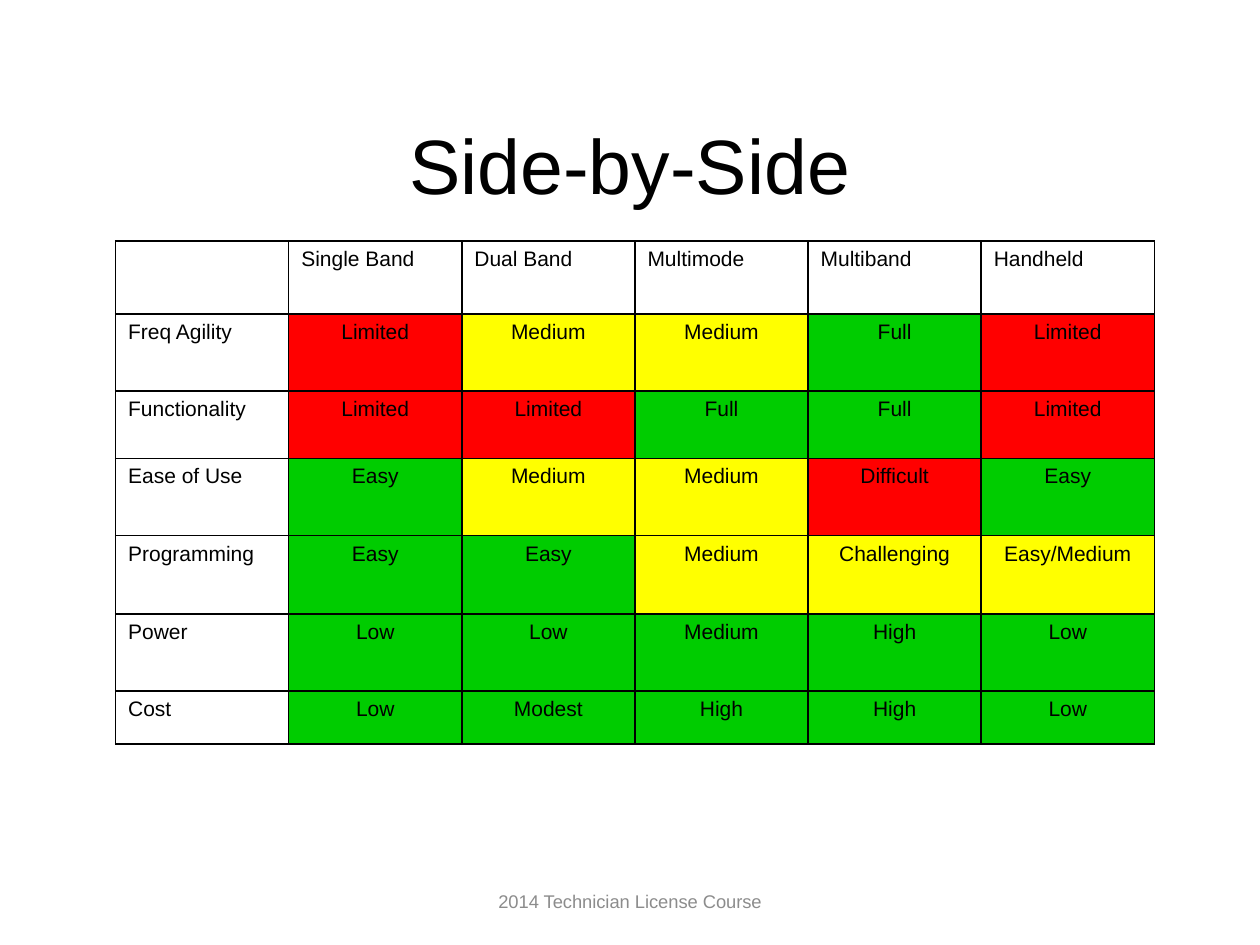
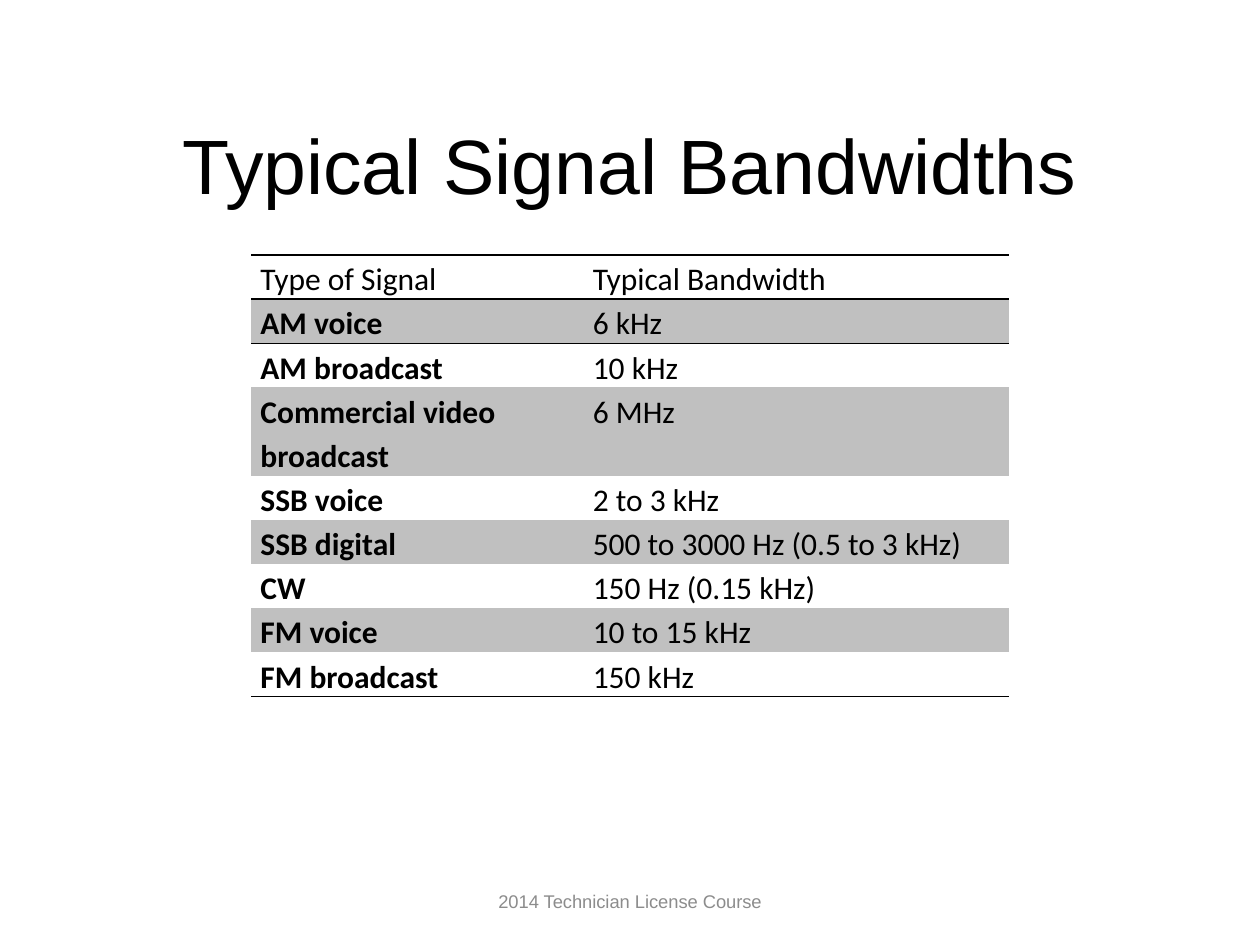
from lxml.etree import SubElement
from pptx import Presentation
from pptx.dml.color import RGBColor
from pptx.enum.text import MSO_ANCHOR, PP_ALIGN
from pptx.oxml.ns import qn
from pptx.util import Cm, Pt

BLACK = RGBColor(0x00, 0x00, 0x00)
GREY = RGBColor(0x8C, 0x8C, 0x8C)
SILVER = RGBColor(0xC0, 0xC0, 0xC0)
RED = RGBColor(0xFF, 0x00, 0x00)
YELLOW = RGBColor(0xFF, 0xFF, 0x00)
GREEN = RGBColor(0x00, 0xCC, 0x00)
RATING = {"R": RED, "Y": YELLOW, "G": GREEN}

PLAIN = "{2D5ABB26-0587-4C30-8999-92F81FD0307C}"
FOOTER = "2014 Technician License Course"

RADIOS = ["", "Single Band", "Dual Band", "Multimode", "Multiband", "Handheld"]
# Feature, row height in cm, one rating letter per radio, wording per radio
FEATURES = [
    ("Freq Agility", 1.55, "RYYGR", ["Limited", "Medium", "Medium", "Full", "Limited"]),
    ("Functionality", 1.36, "RRGGR", ["Limited", "Limited", "Full", "Full", "Limited"]),
    ("Ease of Use", 1.56, "GYYRG", ["Easy", "Medium", "Medium", "Difficult", "Easy"]),
    ("Programming", 1.58, "GGYYY",
     ["Easy", "Easy", "Medium", "Challenging", "Easy/Medium"]),
    ("Power", 1.55, "GGGGG", ["Low", "Low", "Medium", "High", "Low"]),
    ("Cost", 1.07, "GGGGG", ["Low", "Modest", "High", "High", "Low"]),
]
SIGNALS = [
    ("Type of Signal", "Typical Bandwidth"),
    ("AM voice", "6 kHz"),
    ("AM broadcast", "10 kHz"),
    ("Commercial video broadcast", "6 MHz"),
    ("SSB voice", "2 to 3 kHz"),
    ("SSB digital", "500 to 3000 Hz (0.5 to 3 kHz)"),
    ("CW", "150 Hz (0.15 kHz)"),
    ("FM voice", "10 to 15 kHz"),
    ("FM broadcast", "150 kHz"),
]


class Deck:
    def __init__(self):
        self.file = Presentation()
        self.file.slide_width, self.file.slide_height = Cm(25.4), Cm(19.05)
        self.slide = None

    def page(self, title):
        """Start a slide with its title and footer."""
        self.slide = self.file.slides.add_slide(self.file.slide_layouts[5])
        head = self.slide.shapes.title
        head.left, head.top = Cm(1.9), Cm(1.7)
        head.width, head.height = Cm(21.6), Cm(3.18)
        self.label(head, title, 44, BLACK)
        foot = self.slide.shapes.add_textbox(Cm(8.68), Cm(17.65), Cm(8.05), Cm(1.02))
        self.label(foot, FOOTER, 10.5, GREY)

    def label(self, shape, text, size, color):
        """Centre one line of text in a shape."""
        frame = shape.text_frame
        frame.text = text
        frame.word_wrap = True
        frame.vertical_anchor = MSO_ANCHOR.MIDDLE
        self.style(frame.paragraphs[0], size, color, align=PP_ALIGN.CENTER)

    def style(self, para, size, color=BLACK, face="Arial", bold=False,
              align=PP_ALIGN.LEFT):
        para.alignment = align
        font = para.font
        font.name, font.size, font.bold = face, Pt(size), bold
        font.color.rgb = color

    def table(self, left, top, widths, heights):
        """Add an unstyled table; all lengths are in cm."""
        frame = self.slide.shapes.add_table(
            len(heights), len(widths), Cm(left), Cm(top),
            Cm(sum(widths)), Cm(sum(heights)))
        table = frame.table
        table.first_row = table.horz_banding = False
        table._tbl.tblPr.find(qn("a:tableStyleId")).text = PLAIN
        for col, width in zip(table.columns, widths):
            col.width = Cm(width)
        for row, height in zip(table.rows, heights):
            row.height = Cm(height)
        return table

    def cell(self, cell, text, edges, fill=None):
        """Fill a cell, rule the given edges (L, R, T, B), return its paragraph."""
        cell.text = text
        props = cell._tc.get_or_add_tcPr()
        for edge in edges:
            line = SubElement(props, qn("a:ln" + edge), w=str(Pt(1)))
            paint = SubElement(line, qn("a:solidFill"))
            SubElement(paint, qn("a:srgbClr"), val=str(BLACK))
        if fill is None:
            cell.fill.background()
        else:
            cell.fill.solid()
            cell.fill.fore_color.rgb = fill
        return cell.text_frame.paragraphs[0]


def compare(deck):
    deck.page("Side-by-Side")
    heights = [1.47] + [height for _, height, _, _ in FEATURES]
    table = deck.table(2.33, 4.86, [3.49] * len(RADIOS), heights)
    rows = [(RADIOS, " " * len(RADIOS))]
    rows += [([name] + words, " " + marks) for name, _, marks, words in FEATURES]
    for r, (words, marks) in enumerate(rows):
        for c, (word, mark) in enumerate(zip(words, marks)):
            fill = RATING.get(mark)
            para = deck.cell(table.cell(r, c), word, "LRTB", fill)
            props = para._p.get_or_add_pPr()
            props.set("marL", str(Cm(0.96)))
            props.set("indent", str(-Cm(0.96)))
            deck.style(para, 12, align=PP_ALIGN.CENTER if fill else PP_ALIGN.LEFT)


def widths(deck):
    deck.page("Typical Signal Bandwidths")
    heights = [0.89] * len(SIGNALS)
    heights[3] *= 2  # wraps to two lines
    table = deck.table(5.06, 5.14, [6.7, 8.58], heights)
    last = len(SIGNALS) - 1
    for r, row in enumerate(SIGNALS):
        edges = {0: "TB", 1: "T", last: "B"}.get(r, "")
        for c, text in enumerate(row):
            cell = table.cell(r, c)
            cell.margin_left = cell.margin_right = Cm(0.19)
            cell.margin_top = cell.margin_bottom = 0
            para = deck.cell(cell, text, edges, SILVER if r % 2 else None)
            para.line_spacing = 1.15
            deck.style(para, 18, face="Calibri", bold=r > 0 and c == 0)


def main():
    deck = Deck()
    compare(deck)
    widths(deck)
    deck.file.save("out.pptx")


if __name__ == "__main__":
    main()
